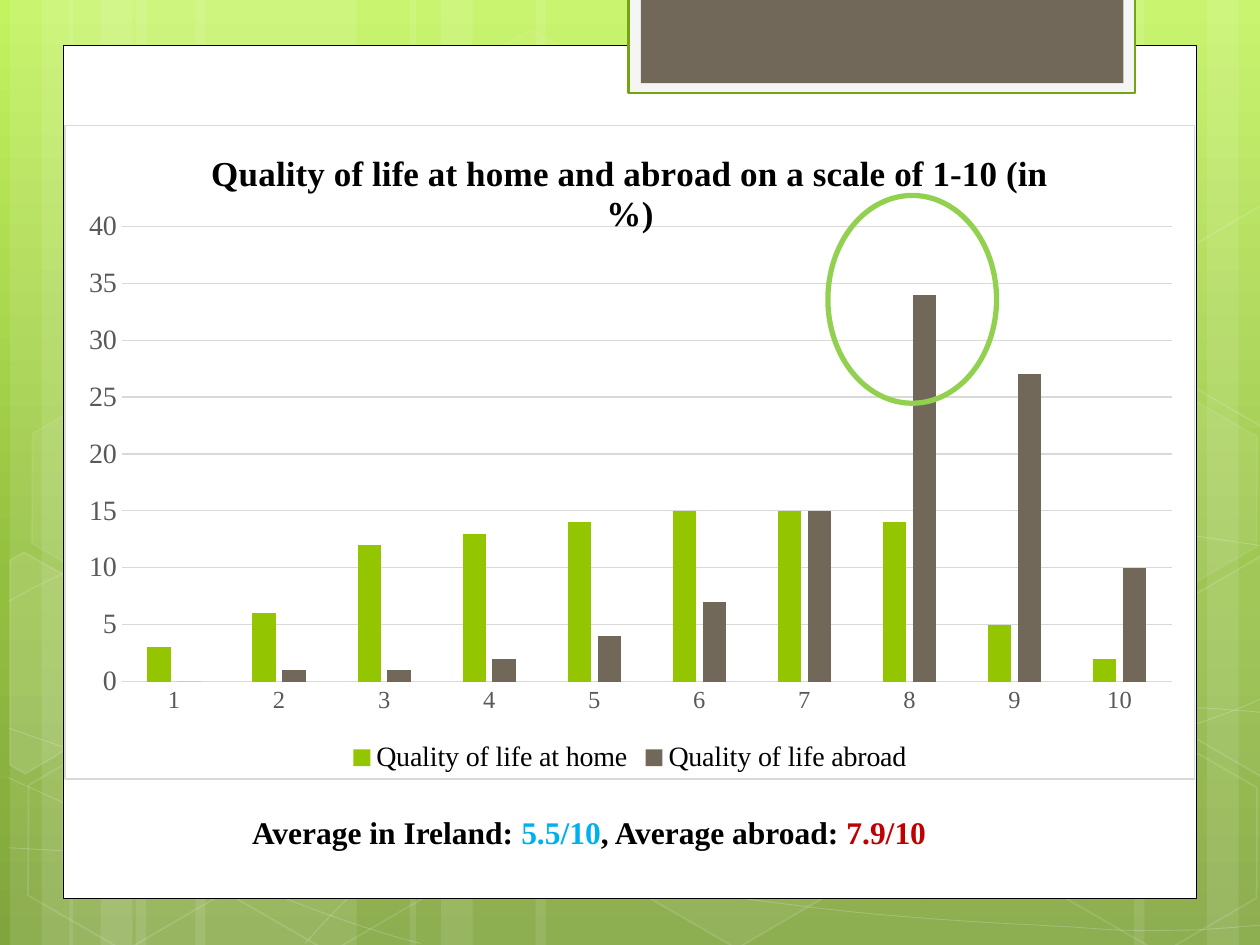
from dataclasses import dataclass

from lxml import etree
from copy import deepcopy
from pptx import Presentation
from pptx.chart.data import CategoryChartData
from pptx.dml.color import RGBColor
from pptx.enum.chart import XL_CHART_TYPE as CT, XL_LEGEND_POSITION as LP, XL_TICK_MARK as TM
from pptx.enum.shapes import MSO_SHAPE as MS
from pptx.enum.text import MSO_AUTO_SIZE as FIT, PP_ALIGN
from pptx.oxml import parse_xml
from pptx.oxml.ns import nsdecls, qn
from pptx.util import Cm, Pt


@dataclass(frozen=True)
class Theme:
    backdrop = ((0, "C3F35F"), (62, "93BF3F"), (100, "81A53E"))
    white, black = "FFFFFF", "000000"
    green, brown = "94C600", "71685A"
    tab, tab_line, ring = "F5F5F5", "74A510", "92D050"
    grid, axis = "D9D9D9", "595959"
    blue, red = "00B0F0", "C00000"
    serif, sans = "Times New Roman", "TeX Gyre Adventor"
    title, caption, label, category, base = 20, 18, 16, 14, 10


T = Theme()


def paint(s, fill=None, line=None, width=1, fill_alpha=100, line_alpha=100):
    """Set fill and outline; alphas are opacity in percent."""
    s.shadow.inherit = False
    for part, color in ((s.fill, fill), (s.line.fill, line)):
        if color:
            part.solid()
            part.fore_color.rgb = RGBColor.from_string(color)
        else:
            part.background()
    if line:
        s.line.width = Pt(width)
    for tag, alpha in (("a:solidFill", fill_alpha), ("a:ln/a:solidFill", line_alpha)):
        steps = [qn(step) for step in f"{tag}/a:srgbClr".split("/")]
        clr = s.element.spPr.find("/".join(steps))
        if clr is not None and alpha < 100:
            etree.SubElement(clr, qn("a:alpha")).set("val", str(alpha * 1000))


def set_font(font, color, **formats):
    font.color.rgb = RGBColor.from_string(color)
    for key, value in formats.items():
        setattr(font, key, value)


prs = Presentation()
prs.slide_width, prs.slide_height = Cm(25.4), Cm(19.05)
slide = prs.slides.add_slide(prs.slide_layouts[6])
shapes = slide.shapes

# Background gradient
bg = slide.background.fill
bg.gradient()
bg.gradient_angle = 270
gs_list = slide.element.find(".//" + qn("a:gsLst"))
gs_list.append(deepcopy(gs_list[-1]))
for stop, (pos, color) in zip(bg.gradient_stops, T.backdrop):
    stop.position = pos / 100
    stop.color.rgb = RGBColor.from_string(color)

# Vertical light stripes: left, width
stripes = [(2.74, 4.45), (0.2, 1.27), (0.84, 2.11), (3.94, 4.45), (1.4, 1.27), (2.03, 2.11),
           (18.62, 4.45), (24.33, 1.27), (22.86, 2.11), (10.8, 7.82), (8.26, 1.27), (8.89, 2.11)]
for left, width in stripes:
    s = shapes.add_shape(MS.RECTANGLE, Cm(left), 0, Cm(width), prs.slide_height)
    paint(s, T.white, fill_alpha=10)

# Thin waves: a start point, then Bezier triples
waves = [
    [(0.18, 17.09), (1.55, 17.17), (2.92, 17.25), (4.83, 17.22), (6.74, 17.2), (9.09, 17.15),
     (11.63, 16.89), (14.17, 16.64), (17.78, 16.15), (20.12, 15.67), (22.43, 15.19),
     (24.82, 14.43), (25.58, 14)],
    [(0.18, 12.12), (0.91, 11.71), (1.65, 11.33), (3.07, 10.95), (4.52, 10.57), (6.58, 10.01),
     (8.81, 9.83), (11.07, 9.65), (13.82, 9.63), (16.61, 9.83), (19.41, 10.03),
     (24.05, 10.82), (25.58, 11.02)],
    [(0.15, 15.67), (3.23, 17.07), (6.27, 18.47), (8.48, 19.02)],
    [(0.18, 14.68), (0.97, 14.96), (1.78, 15.24), (3.25, 15.65), (4.72, 16.03), (6.93, 16.66),
     (9.07, 17.09), (11.18, 17.53), (13.84, 17.98), (15.95, 18.24), (18.06, 18.52),
     (20.32, 18.62), (21.67, 18.69), (22.99, 18.8), (23.34, 18.75), (24, 18.75),
     (24.66, 18.72), (25.12, 18.67), (25.58, 18.64)],
    [(6.15, 19.02), (6.6, 18.52), (7.06, 18.01), (7.67, 17.55), (8.28, 17.09), (9.14, 16.59),
     (9.86, 16.23), (10.57, 15.88), (11, 15.72), (11.94, 15.47), (12.85, 15.21),
     (14.55, 14.86), (15.44, 14.68), (16.36, 14.5), (16.48, 14.5), (17.27, 14.45),
     (18.06, 14.38), (19.3, 14.3), (20.17, 14.27), (21.06, 14.25), (22.5, 14.27),
     (22.5, 14.27), (23.07, 14.27), (23.64, 14.27), (24.21, 14.27), (24.66, 14.3),
     (25.1, 14.33), (25.32, 14.35), (25.55, 14.38), (25.48, 14.35), (25.55, 14.38)],
]
for wave in waves:
    start, *rest = [(Cm(x), Cm(y)) for x, y in wave]
    fb = shapes.build_freeform(*start)
    fb.add_line_segments(rest, close=False)
    s = fb.convert_to_shape()
    segments = list(s.element.iter(qn("a:lnTo")))
    for i in range(0, len(segments), 3):
        curve = etree.SubElement(segments[i].getparent(), qn("a:cubicBezTo"))
        for segment in segments[i:i + 3]:
            curve.append(segment[0])
            segment.getparent().remove(segment)
    paint(s, line=T.white, width=0.5, line_alpha=20)

# Hexagons: left, top, fill opacity, line opacity
hexagons = [(8.48, 0.91, 4, 8), (12.62, 14.96, 6, 12), (0.28, 15.01, 0, 12), (0.36, 7.92, 7, 8),
            (4.42, 15.04, 0, 12), (19.13, 11.51, 10, 12), (21.18, 15.06, 0, 12),
            (21.18, 7.98, 7, 8)]
for left, top, fill_alpha, line_alpha in hexagons:
    s = shapes.add_shape(MS.HEXAGON, Cm(left), Cm(top), Cm(4.45), Cm(3.86))
    s.adjustments[0], s.adjustments[1] = 0.285, 1.155
    s.rotation = 30
    paint(s, T.white if fill_alpha else None, T.white, 1, fill_alpha, line_alpha)

# Hexagons cut by the slide edge: fill opacity, corners
cut_hexagons = [
    (10, [(0.2, 11.3), (0.48, 11.13), (2.44, 12.24), (2.41, 14.48), (0.51, 15.6), (0.2, 15.42)]),
    (4, [(23.52, 12.32), (25.43, 11.2), (25.63, 11.33), (25.63, 15.57), (25.45, 15.67),
         (23.52, 14.55)]),
    (0, [(23.52, 5.26), (25.43, 4.14), (25.65, 4.27), (25.63, 8.51), (25.45, 8.61),
         (23.52, 7.49)]),
]
for fill_alpha, corners in cut_hexagons:
    start, *rest = [(Cm(x), Cm(y)) for x, y in corners]
    fb = shapes.build_freeform(*start)
    fb.add_line_segments(rest)
    paint(fb.convert_to_shape(), T.white if fill_alpha else None, T.white, 1, fill_alpha, 12)

# Content panel and the tab at its top
panels = [((1.27, 0.91, 22.86, 17.2), T.white, T.black, 0.5),
          ((12.67, -0.05, 10.21, 1.93), T.tab, T.tab_line, 1.25),
          ((12.92, -0.05, 9.73, 1.73), T.brown, None, 0)]
for box, fill, line, width in panels:
    paint(shapes.add_shape(MS.RECTANGLE, *map(Cm, box)), fill, line, width)

# Chart
data = CategoryChartData()
data.categories = [str(n) for n in range(1, 11)]
data.add_series("Quality of life at home", (3, 6, 12, 13, 14, 15, 15, 14, 5, 2))
data.add_series("Quality of life abroad", (0, 1, 1, 2, 4, 7, 15, 34, 27, 10))
chart = shapes.add_chart(CT.COLUMN_CLUSTERED, *map(Cm, (1.3, 2.51, 22.8, 13.21)), data).chart
set_font(chart.font, T.black, size=Pt(T.base), name=T.sans)
chart.element.find(qn("c:chart")).addnext(parse_xml(
    f'<c:spPr {nsdecls("c", "a")}><a:solidFill><a:srgbClr val="{T.white}"/></a:solidFill>'
    f'<a:ln w="{Pt(0.75)}"><a:solidFill><a:srgbClr val="{T.grid}"/></a:solidFill></a:ln></c:spPr>'))

chart.has_title = True
chart.chart_title.include_in_layout = False
tf = chart.chart_title.text_frame
tf.word_wrap = False
r = tf.paragraphs[0].add_run()
r.text = "Quality of life at home and abroad on a scale of 1-10 (in %)"
set_font(r.font, T.black, size=Pt(T.title), name=T.serif, bold=True)

chart.has_legend = True
chart.legend.position = LP.BOTTOM
chart.legend.include_in_layout = False
set_font(chart.legend.font, T.black, size=Pt(T.label), name=T.serif)

# Plot area as fractions of the chart
plot_area = chart.element.find(".//" + qn("c:plotArea"))
for old in plot_area.findall(qn("c:layout")):
    plot_area.remove(old)
frame = {"layoutTarget": "inner", "xMode": "edge", "yMode": "edge",
         "x": 0.05, "y": 0.155, "w": 0.93, "h": 0.696}
layout = etree.Element(qn("c:layout"))
manual = etree.SubElement(layout, qn("c:manualLayout"))
for key, value in frame.items():
    etree.SubElement(manual, qn(f"c:{key}")).set("val", str(value))
plot_area.insert(0, layout)

plot = chart.plots[0]
for key, value in {"gap_width": 219, "overlap": -27, "vary_by_categories": False}.items():
    setattr(plot, key, value)
for series, color in zip(plot.series, (T.green, T.brown)):
    series.format.fill.solid()
    series.format.fill.fore_color.rgb = RGBColor.from_string(color)

cat, val = chart.category_axis, chart.value_axis
for axis, size in ((cat, T.category), (val, T.label)):
    axis.major_tick_mark = axis.minor_tick_mark = TM.NONE
    set_font(axis.tick_labels.font, T.axis, size=Pt(size), name=T.serif)
for key, value in {"minimum_scale": 0, "maximum_scale": 40, "major_unit": 5}.items():
    setattr(val, key, value)
val.format.line.fill.background()
for line in (cat.format.line, val.major_gridlines.format.line):
    line.color.rgb = RGBColor.from_string(T.grid)
    line.width = Pt(0.75)

# Highlight ring around score 8
paint(shapes.add_shape(MS.OVAL, *map(Cm, (16.69, 3.94, 3.4, 4.19))), line=T.ring, width=3)

# Averages
tf = shapes.add_textbox(*map(Cm, (4.5, 16.26, 14.91, 1.02))).text_frame
tf.word_wrap = True
tf.auto_size = FIT.SHAPE_TO_FIT_TEXT
p = tf.paragraphs[0]
p.alignment = PP_ALIGN.CENTER
for text, color in (("Average in Ireland: ", T.black), ("5.5/10", T.blue),
                    (", Average abroad: ", T.black), ("7.9/10 ", T.red)):
    r = p.add_run()
    r.text = text
    set_font(r.font, color, size=Pt(T.caption), name=T.serif, bold=True)

prs.save("out.pptx")
